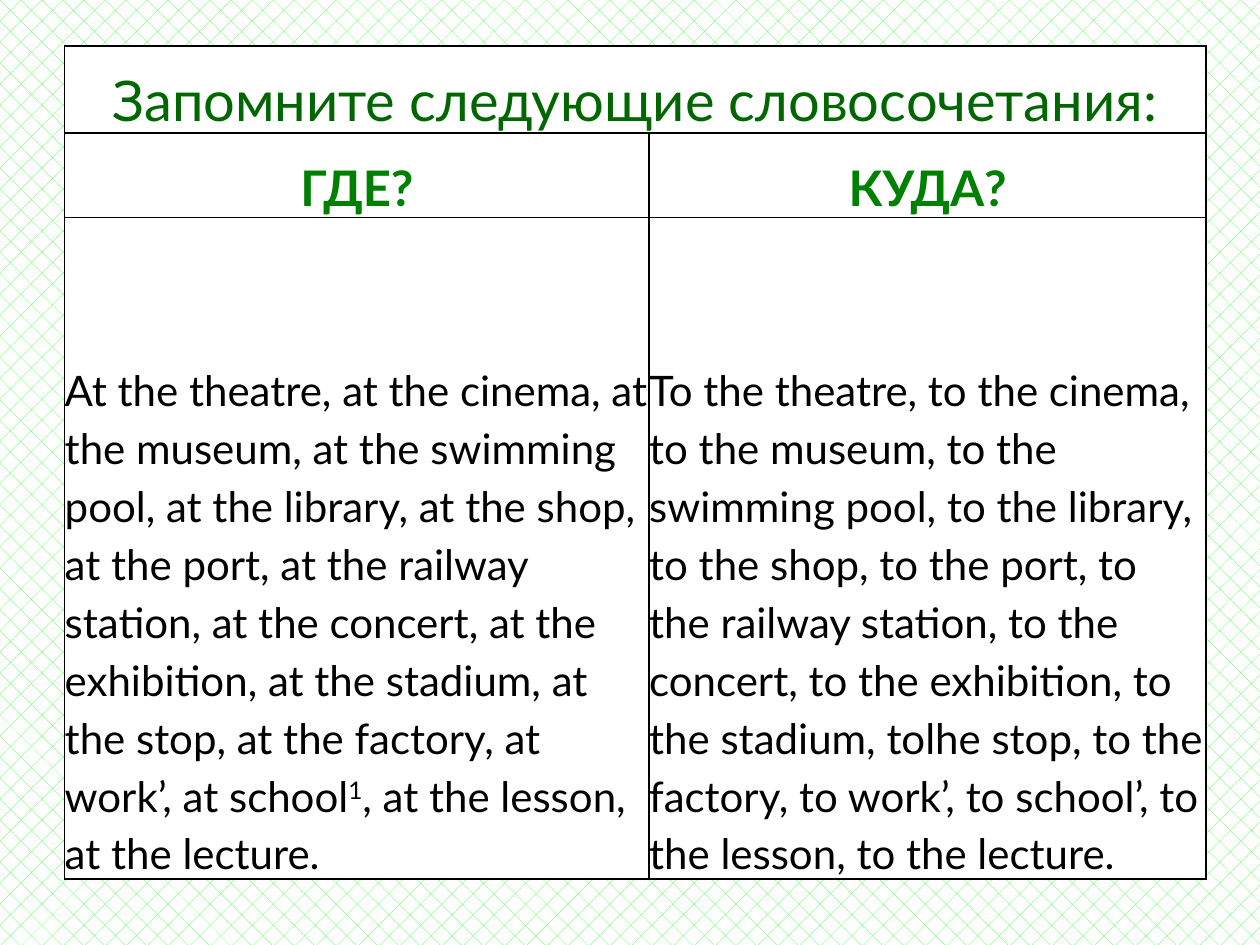
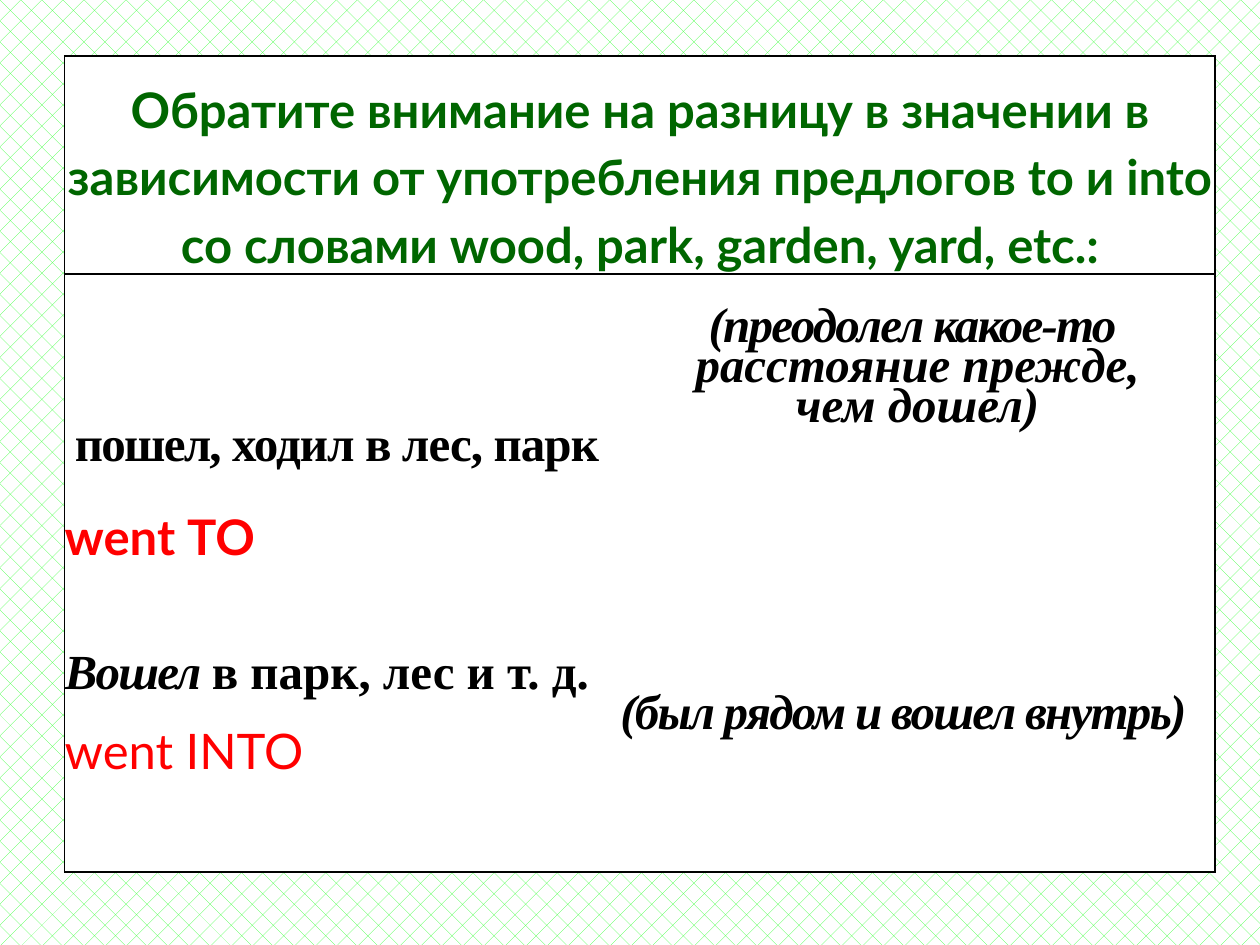
from lxml import etree
from pptx import Presentation
from pptx.dml.color import RGBColor
from pptx.enum.dml import MSO_PATTERN
from pptx.enum.text import MSO_ANCHOR as ANCHOR, PP_ALIGN as ALIGN
from pptx.oxml.ns import qn
from pptx.util import Pt

BLACK = RGBColor(0, 0, 0)
WHITE = RGBColor(255, 255, 255)
RED = RGBColor(255, 0, 0)
DARK_GREEN = RGBColor(0, 0x66, 0)
GREEN = RGBColor(0, 0x80, 0)
LATTICE = RGBColor(0x37, 0xFF, 0x37)

# Text formats: font attributes, plus "raw" run attributes
TITLE = dict(name="Lato", size=Pt(32), color=DARK_GREEN)
RULE = dict(name="Lato", size=Pt(28), color=DARK_GREEN, bold=True)
QUESTION = dict(RULE, color=GREEN)
PHRASES = dict(name="Lato", size=Pt(24), color=BLACK)
FOOTNOTE = dict(PHRASES, raw={"baseline": "30000"})
VERB = dict(name="Lato", size=Pt(28), color=RED)
VERB_BOLD = dict(VERB, bold=True)
MEANING = dict(name="Times New Roman", size=Pt(28), color=BLACK, bold=True)
MEANING_TIGHT = dict(MEANING, raw={"spc": "-100"})
MEANING_SNUG = dict(MEANING, raw={"spc": "-50"})
REMARK = dict(MEANING, italic=True)
REMARK_TIGHT = dict(REMARK, raw={"spc": "-100"})

# Cell layouts; "lift" is the gap below text that sits at the bottom
FIXED = Pt(11.5)
CENTRED = dict(align=ALIGN.CENTER, spacing=FIXED)
CENTRED_LIFTED = dict(CENTRED, lift=Pt(22))
CENTRED_LOOSE = dict(align=ALIGN.CENTER, spacing=1.15)
LEFT = dict(align=ALIGN.LEFT, spacing=FIXED)
LEFT_LIFTED = dict(LEFT, lift=Pt(11.5))
LEFT_HIGH = dict(LEFT, lift=Pt(34.5))
LEFT_LOOSE = dict(align=ALIGN.LEFT, spacing=1.15)
LEFT_TOP = dict(LEFT, anchor=ANCHOR.TOP)

# A cell is (layout, paragraphs); a paragraph is a list of (text, format).
# The first row spans the table; "ruled" counts the rows with full borders.
TABLES = [
    dict(left=37, top=26.4, cols=[334, 318.2], rows=[49.7, 48.2, 378], ruled=3, cells=[
        [(CENTRED, [[("Запомните следующие словосочетания:", TITLE)]])],
        [(CENTRED, [[("ГДЕ?", QUESTION)]]), (CENTRED, [[("КУДА?", QUESTION)]])],
        [(LEFT_LOOSE, [[
            ("At the theatre, at the cinema, at the museum, at the swimming pool, "
             "at the library, at the shop, at the port, at the railway station, "
             "at the concert, at the exhibition, at the stadium, at the stop, "
             "at the factory, at work’, at school", PHRASES),
            ("1", FOOTNOTE),
            (", at the lesson, at the lecture.", PHRASES)]]),
         (LEFT_LOOSE, [[
             ("To the theatre, to the cinema, to the museum, to the swimming pool, "
              "to the library, to the shop, to the port, to the railway station, "
              "to the concert, to the exhibition, to the stadium, tolhe stop, "
              "to the factory, to work’, to school’, to the lesson, to the lecture.",
              PHRASES)]])],
    ]),
    dict(left=37, top=32, cols=[317.5, 339.8],
         rows=[124.5, 113, 42.5, 59, 63.4, 64], ruled=1, cells=[
        [(CENTRED_LOOSE, [[
            ("Обратите внимание на разницу в значении в зависимости от употребления "
             "предлогов to и into со словами wood, park, garden, yard, etc.:", RULE)]])],
        [(CENTRED, [[("пошел, ", MEANING_TIGHT), ("ходил в лес, парк ", MEANING_SNUG)]]),
         (CENTRED_LIFTED, [[("(преодолел какое-то ", REMARK_TIGHT)],
                           [("расстояние прежде,", REMARK)],
                           [("чем дошел)", REMARK)]])],
        [],
        [(LEFT_TOP, [[("went ТО", VERB_BOLD)]])],
        [(LEFT_HIGH, [[("Вошел ", REMARK_TIGHT), ("в парк, лес и т. д.", MEANING)]]),
         (LEFT_LIFTED, [[("(был рядом и вошел внутрь)", REMARK_TIGHT)]])],
        [(LEFT_TOP, [[("went INTO", VERB)]])],
    ]),
]


def add_run(paragraph, text, style):
    run = paragraph.add_run()
    run.text = text
    for key, value in style.items():
        if key == "color":
            run.font.color.rgb = value
        elif key == "raw":
            for attribute, setting in value.items():
                run.font._element.set(attribute, setting)
        else:
            setattr(run.font, key, value)


def write_cell(cell, layout, paragraphs):
    cell.vertical_anchor = layout.get("anchor", ANCHOR.BOTTOM)
    cell.margin_bottom = layout.get("lift", 0)
    frame = cell.text_frame
    for i, runs in enumerate(paragraphs):
        paragraph = frame.add_paragraph() if i else frame.paragraphs[0]
        paragraph.alignment = layout["align"]
        paragraph.line_spacing = layout["spacing"]
        if i:
            paragraph.space_before = FIXED
        for text, style in runs:
            add_run(paragraph, text, style)


def set_borders(cell, sides):
    properties = cell._tc.get_or_add_tcPr()
    for i, side in enumerate("LRTB"):
        line = etree.Element(qn("a:ln" + side), w=str(Pt(1)))
        if side in sides:
            fill = etree.SubElement(line, qn("a:solidFill"))
            etree.SubElement(fill, qn("a:srgbClr"), val=str(BLACK))
        else:
            etree.SubElement(line, qn("a:noFill"))
        properties.insert(i, line)


def border_sides(row, col, spec):
    if row < spec["ruled"]:
        return "LRTB"
    sides = "L" if col == 0 else "R"
    if row == spec["ruled"]:
        sides += "T"
    if row == len(spec["rows"]) - 1:
        sides += "B"
    return sides


def add_phrase_table(slide, spec):
    cols, rows = spec["cols"], spec["rows"]
    table = slide.shapes.add_table(
        len(rows), len(cols), Pt(spec["left"]), Pt(spec["top"]),
        Pt(sum(cols)), Pt(sum(rows))).table
    table.first_row = table.horz_banding = False
    for column, width in zip(table.columns, cols):
        column.width = Pt(width)
    for row, height in zip(table.rows, rows):
        row.height = Pt(height)
    table.cell(0, 0).merge(table.cell(0, len(cols) - 1))

    for r, contents in enumerate(spec["cells"]):
        for c in range(len(cols)):
            cell = table.cell(r, c)
            cell.margin_left = cell.margin_right = 0
            cell.margin_top = cell.margin_bottom = 0
            cell.fill.solid()
            cell.fill.fore_color.rgb = WHITE
            set_borders(cell, border_sides(r, c, spec))
            if c < len(contents):
                write_cell(cell, *contents[c])


def add_lattice_slide(deck):
    slide = deck.slides.add_slide(deck.slide_layouts[6])
    fill = slide.background.fill
    fill.patterned()
    fill.pattern = MSO_PATTERN.DOTTED_DIAMOND
    fill.fore_color.rgb = LATTICE
    fill.back_color.rgb = WHITE
    return slide


def main():
    deck = Presentation()
    deck.slide_width, deck.slide_height = Pt(720), Pt(540)
    for spec in TABLES:
        add_phrase_table(add_lattice_slide(deck), spec)
    deck.save("out.pptx")


if __name__ == "__main__":
    main()
